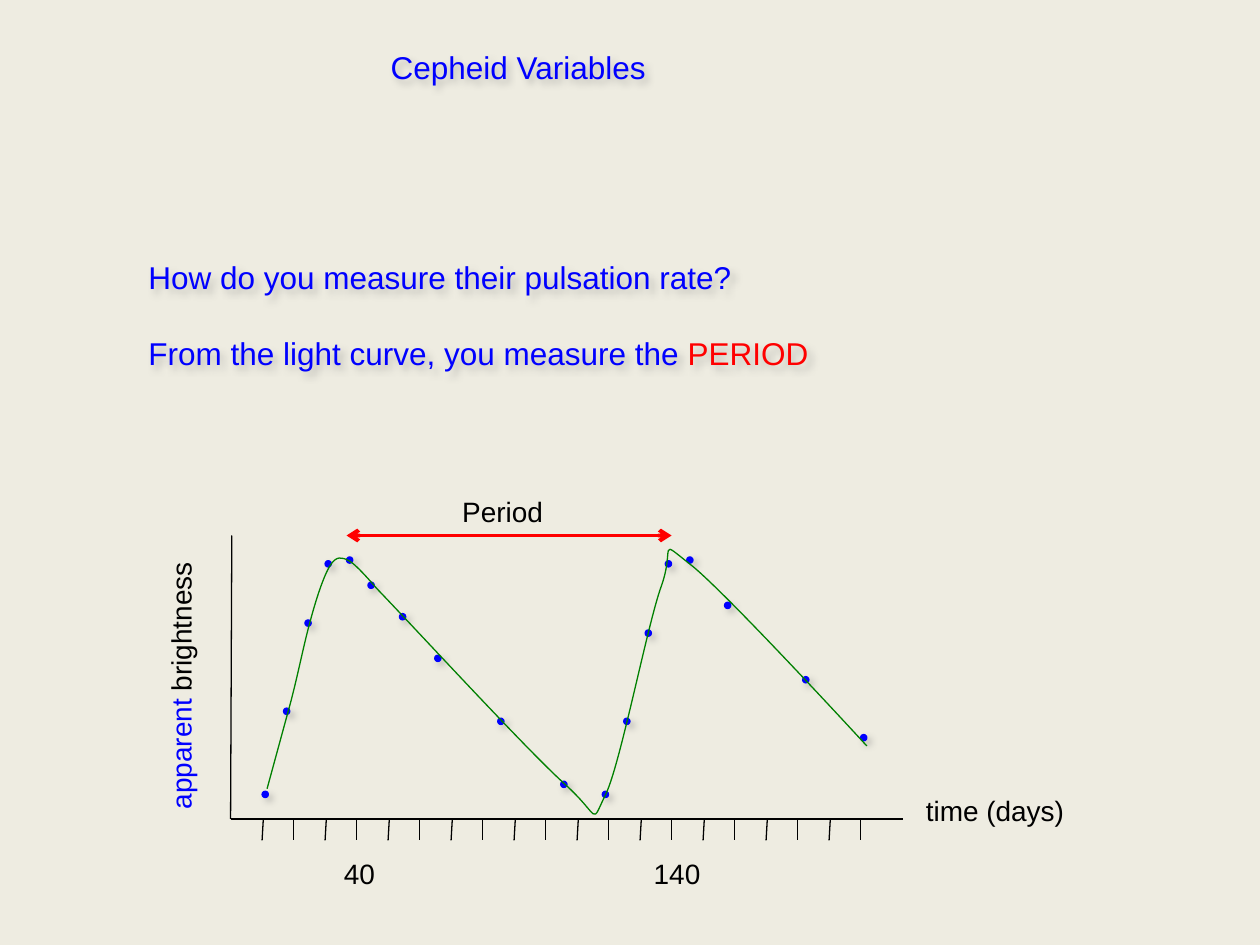
from lxml.etree import SubElement
from pptx import Presentation
from pptx.dml.color import RGBColor
from pptx.enum.shapes import MSO_CONNECTOR as CONNECTOR, MSO_SHAPE as SHAPE
from pptx.enum.text import MSO_ANCHOR as ANCHOR, MSO_AUTO_SIZE as AUTO_SIZE, PP_ALIGN as ALIGN
from pptx.oxml.ns import qn
from pptx.util import Inches, Pt

CREAM = RGBColor(0xEE, 0xEC, 0xE1)
BLUE = RGBColor(0x00, 0x00, 0xFF)
RED = RGBColor(0xFF, 0x00, 0x00)
GREEN = RGBColor(0x00, 0x80, 0x00)
BLACK = RGBColor(0x00, 0x00, 0x00)

OBSERVATIONS = [
    (0.25, 2.03), (0.42, 1.37), (0.59, 0.67), (0.75, 0.2), (0.92, 0.17), (1.09, 0.37),
    (1.34, 0.62), (1.62, 0.95), (2.12, 1.45), (2.62, 1.95), (2.95, 2.03), (3.12, 1.45),
    (3.29, 0.75), (3.45, 0.2), (3.62, 0.17), (3.92, 0.53), (4.54, 1.12), (5, 1.58),
]
CURVE_START = (0.29, 2.01)
CURVE_CONTROLS = [
    (0.35, 1.79), (0.41, 1.57), (0.47, 1.35),
    (0.53, 1.13), (0.58, 0.87), (0.63, 0.69),
    (0.68, 0.5), (0.74, 0.32), (0.79, 0.24),
    (0.84, 0.16), (0.88, 0.17), (0.94, 0.2),
    (1, 0.23), (1.16, 0.42), (1.16, 0.42),
    (1.44, 0.71), (2.35, 1.7), (2.65, 1.97),
    (2.95, 2.24), (2.85, 2.31), (2.98, 2.05),
    (3.1, 1.79), (3.31, 0.7), (3.42, 0.4),
    (3.53, 0.09), (3.38, 0.02), (3.65, 0.23),
    (3.92, 0.44), (5.05, 1.67), (5.05, 1.67),
]


def set_attributes(target, values):
    for name, value in values.items():
        setattr(target, name, value)


def add_soft_shadow(shape):
    shape.shadow.inherit = False
    effects = shape._element.spPr.find(qn("a:effectLst"))
    shadow = SubElement(effects, qn("a:outerShdw"), blurRad=str(Pt(4)), dist=str(Pt(3)),
                        dir="2700000", algn="ctr", rotWithShape="0")
    color = SubElement(shadow, qn("a:srgbClr"), val="808080")
    SubElement(color, qn("a:alpha"), val="43000")


def write_runs(paragraph, runs, size):
    for text, color in runs:
        run = paragraph.add_run()
        run.text = text
        set_attributes(run.font, {"name": "Arial", "size": Pt(size)})
        run.font.color.rgb = color


def place(shape, left, top, width, height):
    set_attributes(shape, {"left": Inches(left), "top": Inches(top),
                           "width": Inches(width), "height": Inches(height)})


def add_label(slide, box, runs, wrap=False):
    label = slide.shapes.add_textbox(*map(Inches, box))
    set_attributes(label.text_frame, {"word_wrap": wrap,
                                      "auto_size": AUTO_SIZE.SHAPE_TO_FIT_TEXT})
    write_runs(label.text_frame.paragraphs[0], runs, 16)
    return label


def add_line(slide, start, end, color=BLACK, width=0.75, arrows=False):
    line = slide.shapes.add_connector(CONNECTOR.STRAIGHT, *map(Inches, start + end))
    line.line.color.rgb = color
    line.line.width = Pt(width)
    if arrows:
        outline = line.line._get_or_add_ln()
        for tag in ("a:headEnd", "a:tailEnd"):
            SubElement(outline, qn(tag), type="arrow")
    SubElement(line._element.spPr, qn("a:effectLst"))


def add_title(slide, box):
    title = slide.shapes.title
    place(title, *box)
    set_attributes(title.text_frame, {"vertical_anchor": ANCHOR.TOP, "word_wrap": True,
                                      "auto_size": AUTO_SIZE.NONE})
    paragraph = title.text_frame.paragraphs[0]
    paragraph.alignment = ALIGN.LEFT
    write_runs(paragraph, [("Cepheid Variables", BLUE)], 18)
    add_soft_shadow(title)


def add_question(slide, box):
    question = slide.shapes.add_textbox(*map(Inches, box))
    frame = question.text_frame
    frame.word_wrap = True
    write_runs(frame.paragraphs[0], [("How do you measure their pulsation rate?", BLUE)], 18)
    answer = frame.add_paragraph()
    answer.space_before = Pt(22)
    write_runs(answer, [("From the light curve, you measure the ", BLUE), ("PERIOD", RED)], 18)
    add_soft_shadow(question)


def add_axes(slide, left, top, width, height):
    bottom = top + height
    add_line(slide, (left + 0.01, top), (left, bottom))
    add_line(slide, (left, bottom), (left + width, bottom))
    for number in range(1, 21):
        tick = left + 0.25 * number
        slant = 0.01 * (number % 2)
        add_line(slide, (tick + slant, bottom), (tick, bottom + 0.17))
    add_label(slide, (left + width + 0.08, bottom - 0.25, 1.31, 0.37), [("time (days)", BLACK)])
    brightness = add_label(slide, (left - 1.49, top + 0.99, 2.19, 0.37),
                           [("apparent ", BLUE), ("brightness", BLACK)])
    brightness.rotation = 270
    days = add_label(slide, (left + 0.8, bottom + 0.25, 4.28, 0.37), [("40\t140", BLACK)], True)
    properties = days.text_frame.paragraphs[0]._p.get_or_add_pPr()
    tabs = SubElement(properties, qn("a:tabLst"))
    SubElement(tabs, qn("a:tab"), pos=str(Inches(2.46)), algn="l")


def bend_segments(curve):
    outline = next(curve._element.iter(qn("a:path")))
    segments = outline.findall(qn("a:lnTo"))
    for first in range(0, len(segments), 3):
        bend = SubElement(outline, qn("a:cubicBezTo"))
        for segment in segments[first:first + 3]:
            bend.append(segment[0])
            outline.remove(segment)


def add_light_curve(slide, left, top):
    for x, y in OBSERVATIONS:
        dot = slide.shapes.add_shape(SHAPE.OVAL, Inches(left + x), Inches(top + y),
                                     Inches(0.05), Inches(0.05))
        dot.fill.solid()
        dot.fill.fore_color.rgb = BLUE
        dot.line.color.rgb = BLUE
        dot.line.width = Pt(0.75)
        add_soft_shadow(dot)
    points = [(Inches(left + x), Inches(top + y)) for x, y in [CURVE_START] + CURVE_CONTROLS]
    builder = slide.shapes.build_freeform(*points[0])
    builder.add_line_segments(points[1:], close=False)
    curve = builder.convert_to_shape()
    bend_segments(curve)
    curve.fill.background()
    curve.line.color.rgb = GREEN
    curve.line.width = Pt(0.75)
    curve.shadow.inherit = False


def add_period(slide, left, top, width):
    add_line(slide, (left, top), (left + width, top), RED, 2.25, True)
    add_label(slide, (left + 0.82, top - 0.37, 0.85, 0.37), [("Period", BLACK)])


def main():
    presentation = Presentation()
    set_attributes(presentation, {"slide_width": Inches(10), "slide_height": Inches(7.5)})
    slide = presentation.slides.add_slide(presentation.slide_layouts[5])
    slide.background.fill.solid()
    slide.background.fill.fore_color.rgb = CREAM
    add_title(slide, (3, 0.33, 3.58, 0.51))
    add_question(slide, (1.08, 2, 7.58, 1.31))
    add_axes(slide, 1.83, 4.25, 5.34, 2.25)
    add_light_curve(slide, 1.83, 4.25)
    add_period(slide, 2.75, 4.25, 2.58)
    presentation.save("out.pptx")


if __name__ == "__main__":
    main()
